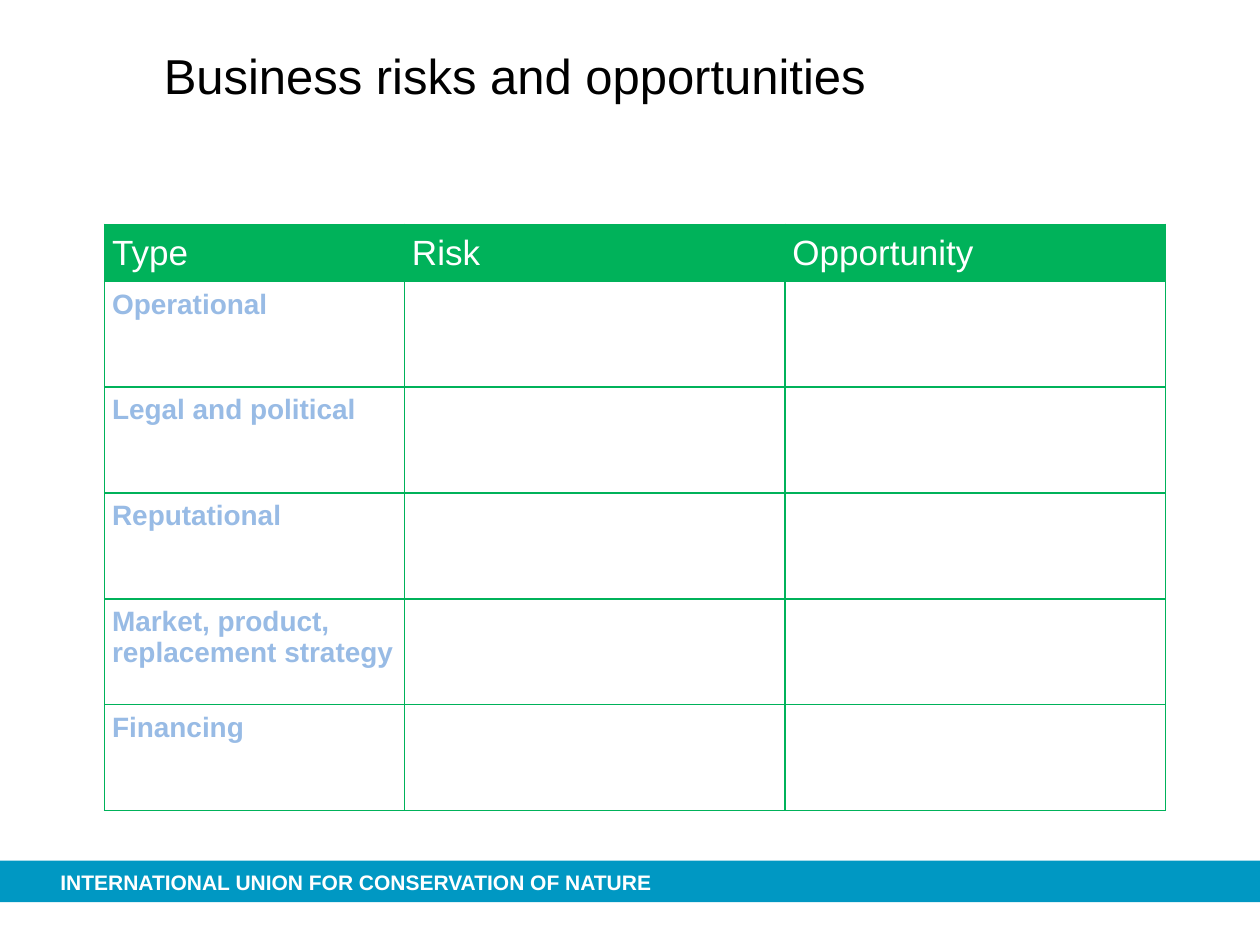
from dataclasses import dataclass

from lxml.etree import SubElement
from pptx import Presentation
from pptx.dml.color import RGBColor
from pptx.enum.shapes import MSO_SHAPE
from pptx.enum.text import MSO_ANCHOR
from pptx.oxml.ns import qn
from pptx.util import Inches, Pt

COLOURS = {
    "black": "000000",
    "white": "FFFFFF",
    "green": "00B25A",
    "blue": "0098C3",
    "pale blue": "98BBE5",
}
HEADINGS = ["Type", "Risk", "Opportunity"]
RISK_TYPES = [
    "Operational",
    "Legal and political",
    "Reputational",
    "Market, product, replacement strategy",
    "Financing",
]
COLUMN_WIDTHS = [2.38, 3.02, 3.02]
ROW_HEIGHTS = [0.45] + [0.84] * len(RISK_TYPES)
CELL_MARGIN = 0.06


@dataclass
class TextStyle:
    size: int
    colour: str
    bold: bool = False


@dataclass
class Label:
    text: str
    left: float
    top: float
    width: float
    height: float
    style: TextStyle
    anchor: MSO_ANCHOR


HEADING_STYLE = TextStyle(20, "white")
TYPE_STYLE = TextStyle(16, "pale blue", True)
LABELS = [
    Label("INTERNATIONAL UNION FOR CONSERVATION OF NATURE", 0.48, 6.9, 5.6, 0.2,
          TextStyle(12, "white", True), MSO_ANCHOR.MIDDLE),
    Label("Business risks and opportunities", 1.3, 0.36, 6.77, 0.87,
          TextStyle(28, "black"), MSO_ANCHOR.TOP),
]


def colour_of(name: str) -> RGBColor:
    return RGBColor.from_string(COLOURS[name])


def set_values(target, values: dict) -> None:
    for name, value in values.items():
        setattr(target, name, value)


def write(paragraph, text: str, style: TextStyle) -> None:
    span = paragraph.add_run()
    span.text = text
    set_values(span.font, {"name": "Arial", "size": Pt(style.size), "bold": style.bold})
    span.font.color.rgb = colour_of(style.colour)


def draw_footer_band(page) -> None:
    band = page.shapes.add_shape(
        MSO_SHAPE.RECTANGLE, Inches(0), Inches(6.83), Inches(10), Inches(0.33))
    band.shadow.inherit = False
    band.fill.solid()
    band.fill.fore_color.rgb = colour_of("blue")
    band.line.fill.background()


def draw_label(page, label: Label) -> None:
    box = page.shapes.add_textbox(
        Inches(label.left), Inches(label.top), Inches(label.width), Inches(label.height))
    set_values(box.text_frame, {
        "word_wrap": True, "vertical_anchor": label.anchor,
        "margin_left": 0, "margin_right": 0, "margin_top": 0, "margin_bottom": 0,
    })
    write(box.text_frame.paragraphs[0], label.text, label.style)


def add_borders(cell, colour: str) -> None:
    properties = cell._tc.get_or_add_tcPr()
    for side in ("lnL", "lnR", "lnT", "lnB"):
        line = SubElement(properties, qn(f"a:{side}"), w=str(Pt(1)))
        fill = SubElement(line, qn("a:solidFill"))
        SubElement(fill, qn("a:srgbClr"), val=COLOURS[colour])


def format_cell(cell, fill: str, anchor: MSO_ANCHOR) -> None:
    add_borders(cell, "green")
    cell.fill.solid()
    cell.fill.fore_color.rgb = colour_of(fill)
    margin = Inches(CELL_MARGIN)
    set_values(cell, {
        "vertical_anchor": anchor, "margin_left": margin, "margin_right": margin,
        "margin_top": margin, "margin_bottom": margin,
    })


def draw_table(page) -> None:
    table = page.shapes.add_table(
        len(ROW_HEIGHTS), len(COLUMN_WIDTHS), Inches(0.83), Inches(1.78),
        Inches(sum(COLUMN_WIDTHS)), Inches(sum(ROW_HEIGHTS))).table
    table.horz_banding = False
    for column, width in zip(table.columns, COLUMN_WIDTHS):
        column.width = Inches(width)
    for index, height in enumerate(ROW_HEIGHTS):
        table.rows[index].height = Inches(height)
        for cell in table.rows[index].cells:
            if index == 0:
                format_cell(cell, "green", MSO_ANCHOR.MIDDLE)
            else:
                format_cell(cell, "white", MSO_ANCHOR.TOP)
    for index, heading in enumerate(HEADINGS):
        write(table.cell(0, index).text_frame.paragraphs[0], heading, HEADING_STYLE)
    for index, risk_type in enumerate(RISK_TYPES, start=1):
        paragraph = table.cell(index, 0).text_frame.paragraphs[0]
        paragraph.space_after = Pt(3)
        write(paragraph, risk_type, TYPE_STYLE)


def main() -> None:
    """Build the slide on business risks and opportunities."""
    deck = Presentation()
    set_values(deck, {"slide_width": Inches(10), "slide_height": Inches(7.5)})
    page = deck.slides.add_slide(deck.slide_layouts[6])
    draw_footer_band(page)
    for label in LABELS:
        draw_label(page, label)
    draw_table(page)
    deck.save("out.pptx")


if __name__ == "__main__":
    main()
